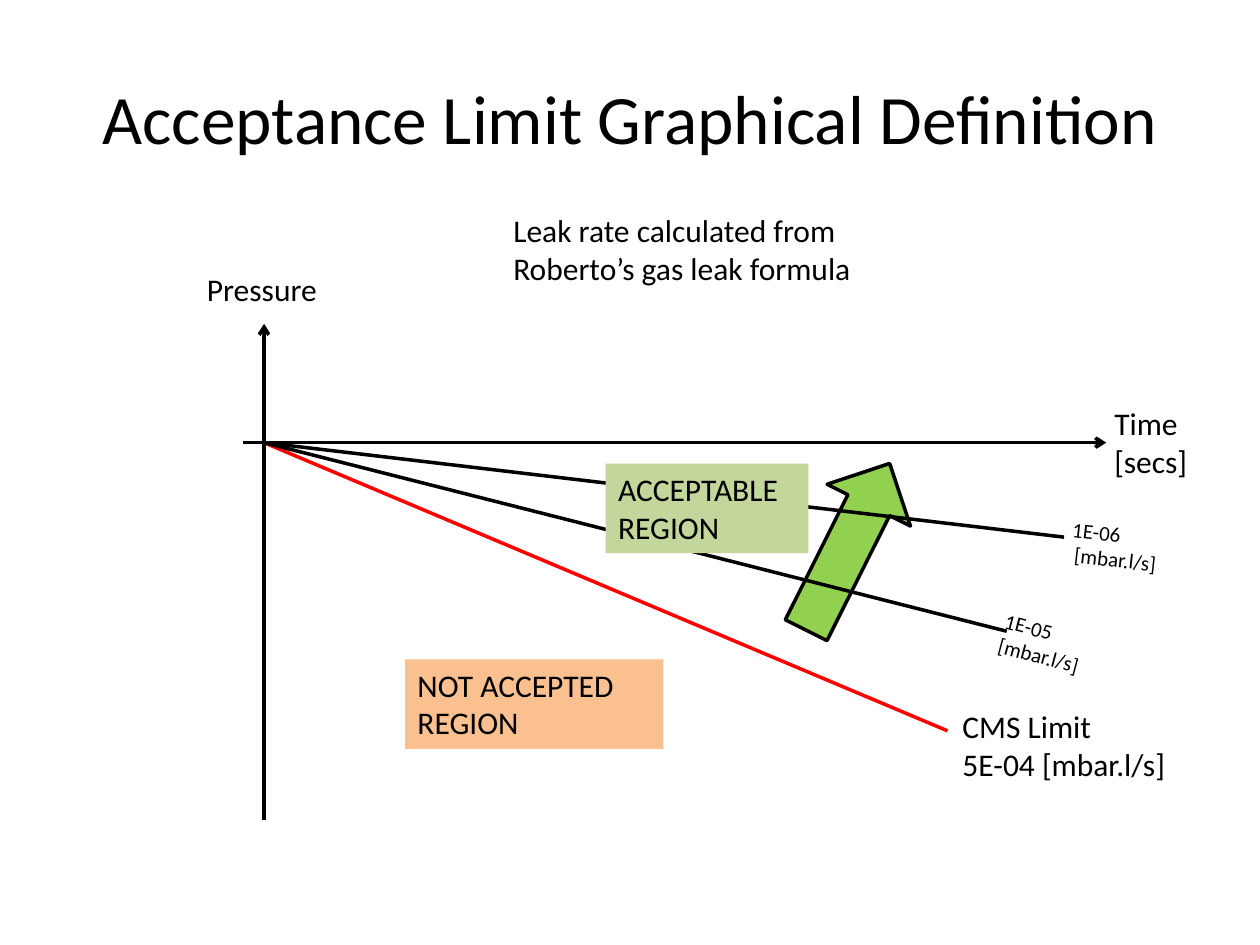
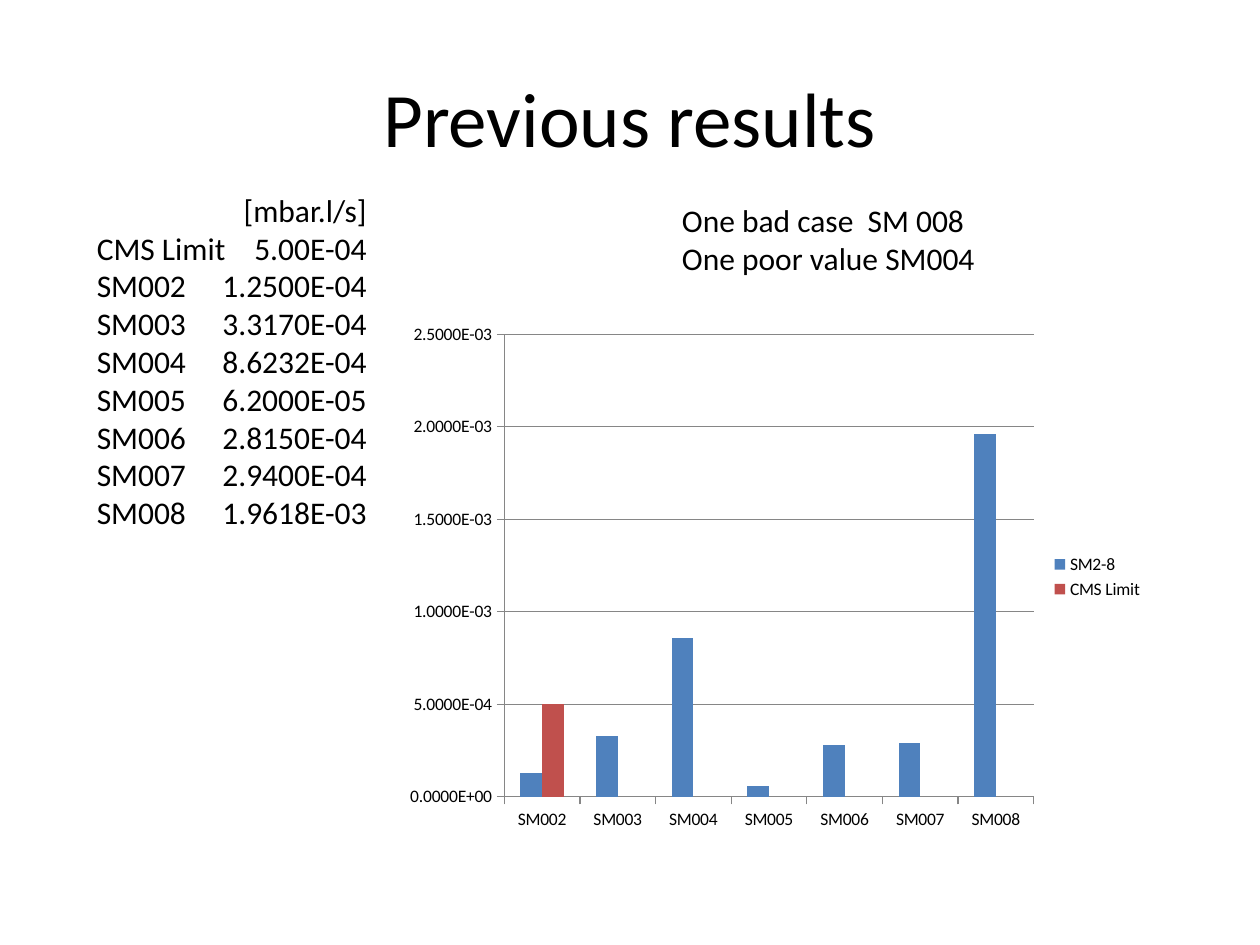
from lxml import etree
from pptx import Presentation
from pptx.chart.data import CategoryChartData
from pptx.dml.color import RGBColor
from pptx.enum.chart import XL_CHART_TYPE, XL_LEGEND_POSITION, XL_TICK_MARK
from pptx.enum.shapes import MSO_CONNECTOR, MSO_SHAPE
from pptx.enum.text import MSO_ANCHOR, PP_ALIGN
from pptx.oxml.ns import qn
from pptx.util import Inches, Pt

COLUMN_CHART = XL_CHART_TYPE.COLUMN_CLUSTERED
LEGEND_RIGHT = XL_LEGEND_POSITION.RIGHT
TICK_OUTSIDE = XL_TICK_MARK.OUTSIDE
TICK_NONE = XL_TICK_MARK.NONE
STRAIGHT = MSO_CONNECTOR.STRAIGHT
RECTANGLE = MSO_SHAPE.RECTANGLE
UP_ARROW = MSO_SHAPE.UP_ARROW
MIDDLE = MSO_ANCHOR.MIDDLE
TOP = MSO_ANCHOR.TOP
CENTER = PP_ALIGN.CENTER
LEFT = PP_ALIGN.LEFT

SLIDE_WIDTH, SLIDE_HEIGHT = Inches(10), Inches(7.5)
COLUMNS, ROWS = 100, 75
FONT = "Calibri"
BLACK, RED, GREEN = "000000", "FF0000", "92D050"
PALE_GREEN, PALE_ORANGE = "C3D69B", "FAC090"
BAR_BLUE, BAR_RED, GRID_GRAY = "4F81BD", "C0504D", "868686"
BODY_SIZE, SMALL_SIZE, CHART_SIZE = 18, 12, 10
LINE_WIDTH, GRID_WIDTH = 2, 0.7
UNIT = "[mbar.l/s]"
LIMIT_NAME = "CMS Limit"
LIMIT_TEXT, LIMIT_BAR = "5.00E-04", 0.0005
LEAK_RATES = [
    ("SM002", "1.2500E-04", 0.00013),
    ("SM003", "3.3170E-04", 0.00033),
    ("SM004", "8.6232E-04", 0.00086),
    ("SM005", "6.2000E-05", 0.00006),
    ("SM006", "2.8150E-04", 0.00028),
    ("SM007", "2.9400E-04", 0.00029),
    ("SM008", "1.9618E-03", 0.00196),
]


def color(value):
    return RGBColor.from_string(value)


def across(columns):
    return round(SLIDE_WIDTH * columns / COLUMNS)


def down(rows):
    return round(SLIDE_HEIGHT * rows / ROWS)


def place(left, top, width, height):
    return across(left), down(top), across(width), down(height)


def set_format(target, values):
    for name, value in values.items():
        setattr(target, name, value)


def set_font(font, size):
    set_format(font, {"name": FONT, "size": Pt(size)})
    font.color.rgb = color(BLACK)


def set_line(line, value, width=LINE_WIDTH):
    line.color.rgb = color(value)
    line.width = Pt(width)


def write(shape, lines, size=BODY_SIZE, align=LEFT, anchor=TOP):
    frame = shape.text_frame
    set_format(frame, {"word_wrap": True, "vertical_anchor": anchor})
    for index, text in enumerate(lines):
        paragraph = frame.add_paragraph() if index else frame.paragraphs[0]
        paragraph.alignment = align
        run = paragraph.add_run()
        run.text = text
        set_font(run.font, size)


def add_titled_slide(presentation, title, size):
    slide = presentation.slides.add_slide(presentation.slide_layouts[5])
    shape = slide.shapes.title
    bounds = zip(("left", "top", "width", "height"), place(5, 3, 90, 12.5))
    set_format(shape, dict(bounds))
    write(shape, [title], size, CENTER, MIDDLE)
    return slide


def add_label(slide, bounds, lines, size=BODY_SIZE, rotation=0):
    label = slide.shapes.add_textbox(*place(*bounds))
    label.rotation = rotation
    write(label, lines, size)
    return label


def add_region(slide, bounds, text, fill):
    region = slide.shapes.add_shape(RECTANGLE, *place(*bounds))
    region.shadow.inherit = False
    region.fill.solid()
    region.fill.fore_color.rgb = color(fill)
    region.line.fill.background()
    write(region, [text])


def add_line(slide, start, end, value=BLACK, arrow=False):
    connector = slide.shapes.add_connector(
        STRAIGHT, across(start[0]), down(start[1]), across(end[0]), down(end[1])
    )
    set_line(connector.line, value)
    properties = connector.element.spPr
    if arrow:
        etree.SubElement(properties.find(qn("a:ln")), qn("a:tailEnd"), type="arrow")
    etree.SubElement(properties, qn("a:effectLst"))


def add_improvement_arrow(slide):
    arrow = slide.shapes.add_shape(UP_ARROW, *place(63.6, 36, 7.4, 14.8))
    arrow.rotation = 26.6
    arrow.shadow.inherit = False
    arrow.fill.solid()
    arrow.fill.fore_color.rgb = color(GREEN)
    set_line(arrow.line, BLACK)


def add_right_tab(shape, position):
    for paragraph in shape.element.iter(qn("a:p")):
        tabs = etree.SubElement(paragraph.get_or_add_pPr(), qn("a:tabLst"))
        etree.SubElement(tabs, qn("a:tab"), pos=str(across(position)), algn="r")


def add_results_list(slide):
    rows = [("", UNIT), (LIMIT_NAME, LIMIT_TEXT)]
    rows += [(name, text) for name, text, bar in LEAK_RATES]
    results = add_label(slide, (6.7, 14.65, 50, 34.3), ["\t".join(row) for row in rows])
    add_right_tab(results, 21.42)


def add_leak_chart(slide):
    names, texts, bars = zip(*LEAK_RATES)
    data = CategoryChartData(number_format="0.0000E+00")
    data.categories = names
    data.add_series("SM2-8", bars)
    data.add_series(LIMIT_NAME, [LIMIT_BAR] + [None] * (len(bars) - 1))
    bounds = place(31.35, 24.93, 60.4, 41.7)
    chart = slide.shapes.add_chart(COLUMN_CHART, *bounds, data).chart
    set_font(chart.font, CHART_SIZE)
    set_format(chart, {"has_title": False, "has_legend": True})
    set_format(chart.legend, {"position": LEGEND_RIGHT, "include_in_layout": False})

    plot = chart.plots[0]
    set_format(plot, {"gap_width": 150, "overlap": 0, "vary_by_categories": False})
    for series, fill in zip(plot.series, (BAR_BLUE, BAR_RED)):
        series.format.fill.solid()
        series.format.fill.fore_color.rgb = color(fill)

    for axis in (chart.category_axis, chart.value_axis):
        set_format(axis, {"major_tick_mark": TICK_OUTSIDE, "minor_tick_mark": TICK_NONE})
        set_line(axis.format.line, GRID_GRAY, GRID_WIDTH)
    scale = {"minimum_scale": 0, "maximum_scale": 0.0025, "major_unit": 0.0005}
    set_format(chart.value_axis, {**scale, "has_major_gridlines": True})
    set_line(chart.value_axis.major_gridlines.format.line, GRID_GRAY, GRID_WIDTH)
    labels = {"number_format": "0.0000E+00", "number_format_is_linked": False}
    set_format(chart.value_axis.tick_labels, labels)


def build_limit_slide(presentation):
    slide = add_titled_slide(presentation, "Acceptance Limit Graphical Definition", 39.6)
    origin = (20.96, 35.13)
    add_line(slide, (19.3, origin[1]), (87.8, origin[1]), arrow=True)
    add_line(slide, (origin[0], 65.1), (origin[0], 25.7), arrow=True)
    add_line(slide, origin, (75.2, 58), RED)
    add_label(slide, (75.4, 55.6, 18.1, 7.1), [LIMIT_NAME, f"5E-04 {UNIT}"])
    add_improvement_arrow(slide)
    add_label(slide, (15.44, 20.95, 11, 4), ["Pressure"])
    add_label(slide, (87.45, 31.6, 9.1, 7.1), ["Time [secs]"])
    for end in ((79.9, 50.1), (84.45, 42.63)):
        add_line(slide, origin, end)
    add_label(slide, (78.4, 49, 12.1, 5), [f"1E-05 {UNIT}"], SMALL_SIZE, 15)
    add_label(slide, (84, 41.04, 12.1, 5), ["1E-06", f" {UNIT}"], SMALL_SIZE, 6.4)
    add_region(slide, (48.07, 36.8, 16.1, 7.1), "ACCEPTABLE REGION", PALE_GREEN)
    add_region(slide, (32.15, 52.34, 20.5, 7.1), "NOT ACCEPTED REGION", PALE_ORANGE)
    add_label(slide, (39.76, 16.24, 35.6, 7.1),
              ["Leak rate calculated from Roberto’s gas leak formula"])


def build_results_slide(presentation):
    slide = add_titled_slide(presentation, "Previous results", 44)
    add_results_list(slide)
    add_leak_chart(slide)
    add_label(slide, (53.14, 15.45, 29.9, 7.1),
              ["One bad case  SM 008", "One poor value SM004"])


def main():
    presentation = Presentation()
    set_format(presentation, {"slide_width": SLIDE_WIDTH, "slide_height": SLIDE_HEIGHT})
    build_limit_slide(presentation)
    build_results_slide(presentation)
    presentation.save("out.pptx")


if __name__ == "__main__":
    main()
